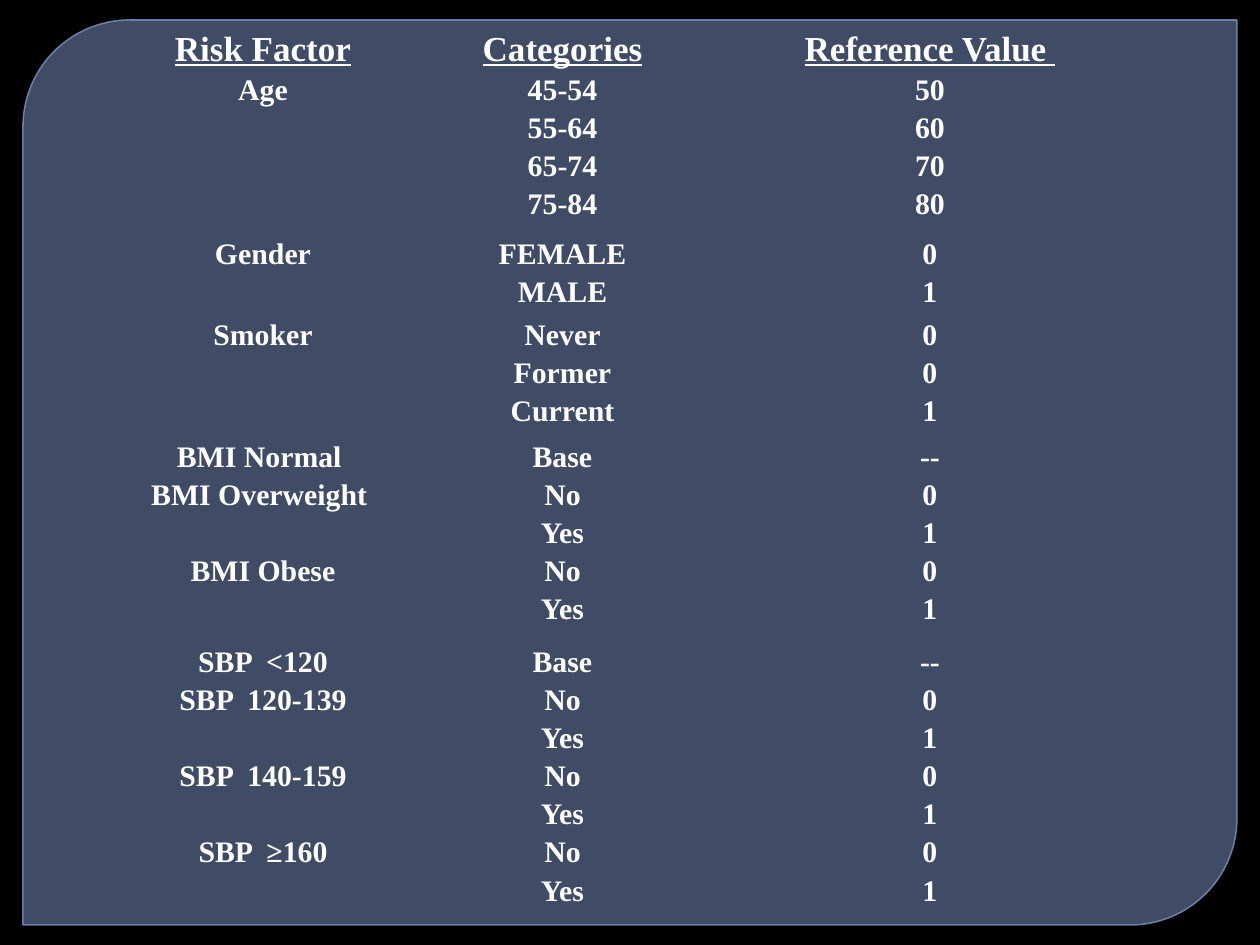
from lxml import etree
from pptx import Presentation
from pptx.dml.color import RGBColor
from pptx.enum.shapes import MSO_SHAPE
from pptx.enum.text import PP_ALIGN
from pptx.oxml.ns import qn
from pptx.util import Emu, Pt

PANEL_SHAPE = MSO_SHAPE.ROUND_2_DIAG_RECTANGLE
CENTER = PP_ALIGN.CENTER
EMU_PER_PX = 914400 // 126
NO_GRID_STYLE = "{2D5ABB26-0587-4C30-8999-92F81FD0307C}"

FONT = "Times New Roman"
LINE_PT = 21.8  # height of one body line
COL_WIDTHS = [368, 231, 504]
HEADER_HEIGHT = 38
HEADERS = ["Risk Factor", "Categories", "Reference Value "]

# Each group: row height, then factors as (label, [(category, value), ...])
BASE = [("Base", "--")]
NO_YES = [("No", "0"), ("Yes", "1")]
GROUPS = [
    (164, [("Age", [("45-54", "50"), ("55-64", "60"),
                    ("65-74", "70"), ("75-84", "80")])]),
    (81, [("Gender", [("FEMALE", "0"), ("MALE", "1")])]),
    (122, [("Smoker", [("Never", "0"), ("Former", "0"), ("Current", "1")])]),
    (205, [("BMI Normal ", BASE), ("BMI Overweight ", NO_YES),
           ("BMI Obese", NO_YES)]),
    (289, [("SBP  <120", BASE), ("SBP  120-139", NO_YES),
           ("SBP  140-159", NO_YES), ("SBP  ≥160", NO_YES)]),
]


def px(n):
    return Emu(n * EMU_PER_PX)


def rgb(value):
    return RGBColor.from_string(value)


def set_alpha(fill, color, percent):
    """Give a solid fill a colour and an opacity."""
    fill.solid()
    fill.fore_color.rgb = rgb(color)
    clr = fill._xPr.find(qn("a:solidFill"))[0]
    etree.SubElement(clr, qn("a:alpha")).set("val", str(percent * 1000))


def add_panel(s):
    sp = s.shapes.add_shape(PANEL_SHAPE, px(23), px(20), px(1214), px(905))
    sp.shadow.inherit = False
    sp.adjustments[0] = 0.118
    sp.adjustments[1] = 0
    set_alpha(sp.fill, "63759D", 65)
    sp.line.width = Pt(0.87)
    set_alpha(sp.line.fill, "7989B3", 88)


def fill_cell(cell, lines, size=17, underline=False):
    """Write (text, lines left free above) pairs as centred paragraphs."""
    cell.fill.background()
    cell.margin_left = cell.margin_right = px(4)
    cell.margin_top = cell.margin_bottom = 0
    tf = cell.text_frame
    for i, (text, gap) in enumerate(lines):
        p = tf.add_paragraph() if i else tf.paragraphs[0]
        p.alignment = CENTER
        p.line_spacing = 1.15
        p.space_before = Pt(gap * LINE_PT)
        r = p.add_run()
        r.text = text
        r.font.name = FONT
        r.font.size = Pt(size)
        r.font.bold = True
        r.font.underline = underline
        r.font.color.rgb = rgb("FFFFFF")


def group_columns(factors):
    """Split a group into its label, category and value lines."""
    labels, levels, gap = [], [], 0
    for label, factor_levels in factors:
        labels.append((label, gap))
        levels += factor_levels
        gap = len(factor_levels) - 1
    return [labels] + [[(text, 0) for text in col] for col in zip(*levels)]


def add_risk_table(s):
    heights = [HEADER_HEIGHT] + [height for height, _ in GROUPS]
    frame = s.shapes.add_table(len(heights), len(COL_WIDTHS), px(79), px(24),
                               px(sum(COL_WIDTHS)), px(sum(heights)))
    table = frame.table
    table.first_row = table.horz_banding = False
    next(frame._element.iter(qn("a:tableStyleId"))).text = NO_GRID_STYLE
    for col, width in zip(table.columns, COL_WIDTHS):
        col.width = px(width)
    for row, height in zip(table.rows, heights):
        row.height = px(height)

    # Header row
    for c, text in enumerate(HEADERS):
        fill_cell(table.cell(0, c), [(text, 0)], size=20, underline=True)
    # One row per group of risk factors
    for r, (_, factors) in enumerate(GROUPS, start=1):
        for c, lines in enumerate(group_columns(factors)):
            fill_cell(table.cell(r, c), lines)


def main():
    prs = Presentation()
    prs.slide_width, prs.slide_height = px(1260), px(945)
    s = prs.slides.add_slide(prs.slide_layouts[6])
    s.background.fill.solid()
    s.background.fill.fore_color.rgb = rgb("000000")
    add_panel(s)
    add_risk_table(s)
    prs.save("out.pptx")


if __name__ == "__main__":
    main()
